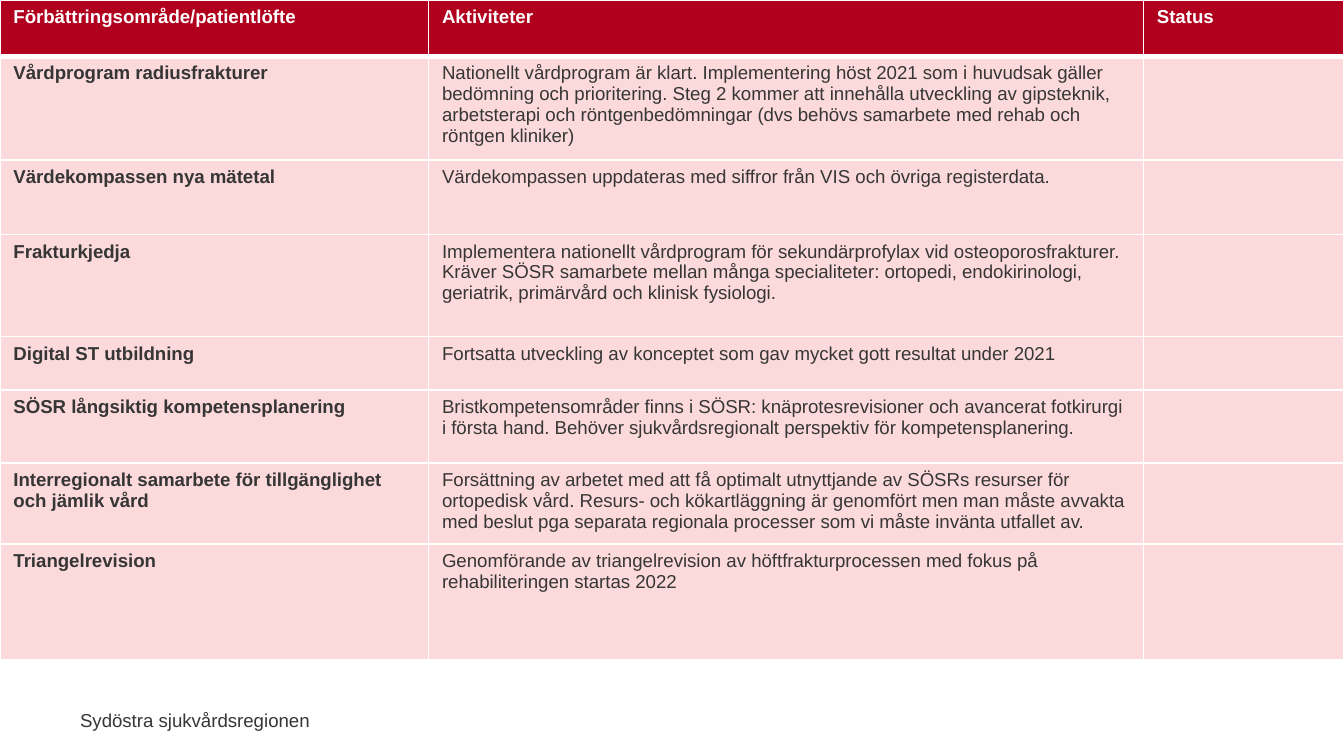
"""Build a one-page activity status table for a regional orthopaedic plan."""

from dataclasses import dataclass
from typing import NamedTuple

from lxml import etree
from pptx import Presentation
from pptx.dml.color import RGBColor
from pptx.enum.text import MSO_ANCHOR, MSO_AUTO_SIZE, PP_ALIGN
from pptx.oxml.ns import qn
from pptx.util import Cm, Pt

RIGHT = PP_ALIGN.RIGHT
MIDDLE = MSO_ANCHOR.MIDDLE
GROW = MSO_AUTO_SIZE.SHAPE_TO_FIT_TEXT


@dataclass(frozen=True)
class Theme:
    font: str = "Arial"
    size: Pt = Pt(10)
    text: str = "363636"
    light: str = "FFFFFF"
    header: str = "B1001E"
    body: str = "FCD9DA"
    thin: Pt = Pt(1)
    thick: Pt = Pt(3)


class Activity(NamedTuple):
    height: float
    area: str
    action: str
    status: str = ""


THEME = Theme()
COLUMN_WIDTHS = (8.1, 13.51, 3.79)
ACTIVITIES = (
    Activity(1.06, "Förbättringsområde/patientlöfte", "Aktiviteter", "Status"),
    Activity(
        1.96,
        "Vårdprogram radiusfrakturer",
        "Nationellt vårdprogram är klart. Implementering höst 2021 som i huvudsak "
        "gäller bedömning och prioritering. Steg 2 kommer att innehålla utveckling "
        "av gipsteknik, arbetsterapi och röntgenbedömningar (dvs behövs samarbete "
        "med rehab och röntgen kliniker)",
    ),
    Activity(
        1.41,
        "Värdekompassen nya mätetal",
        "Värdekompassen uppdateras med siffror från VIS och övriga registerdata.",
    ),
    Activity(
        1.93,
        "Frakturkjedja",
        "Implementera nationellt vårdprogram för sekundärprofylax vid "
        "osteoporosfrakturer. Kräver SÖSR samarbete mellan många specialiteter: "
        "ortopedi, endokirinologi, geriatrik, primärvård och klinisk fysiologi.",
    ),
    Activity(
        1.01,
        "Digital ST utbildning",
        "Fortsatta utveckling av konceptet som gav mycket gott resultat under 2021",
    ),
    Activity(
        1.38,
        "SÖSR långsiktig kompetensplanering",
        "Bristkompetensområder finns i SÖSR: knäprotesrevisioner och avancerat "
        "fotkirurgi i första hand. Behöver sjukvårdsregionalt perspektiv för "
        "kompetensplanering.",
    ),
    Activity(
        1.53,
        "Interregionalt samarbete för tillgänglighet och jämlik vård",
        "Forsättning av arbetet med att få optimalt utnyttjande av SÖSRs resurser "
        "för ortopedisk vård. Resurs- och kökartläggning är genomfört men man måste "
        "avvakta med beslut pga separata regionala processer som vi måste invänta "
        "utfallet av.",
    ),
    Activity(
        2.18,
        "Triangelrevision",
        "Genomförande av triangelrevision av höftfrakturprocessen med fokus på "
        "rehabiliteringen startas 2022",
    ),
)


def style_text(frame, color: str, bold: bool = False) -> None:
    for para in frame.paragraphs:
        para.font.size = THEME.size
        for span in para.runs:
            span.font.name = THEME.font
            span.font.size = THEME.size
            span.font.bold = bold
            span.font.color.rgb = RGBColor.from_string(color)


def add_borders(cell, top: Pt, bottom: Pt) -> None:
    properties = cell._tc.get_or_add_tcPr()
    widths = {"a:lnL": THEME.thin, "a:lnR": THEME.thin, "a:lnT": top, "a:lnB": bottom}
    for tag, width in widths.items():
        line = etree.SubElement(properties, qn(tag), w=str(int(width)))
        fill = etree.SubElement(line, qn("a:solidFill"))
        etree.SubElement(fill, qn("a:srgbClr"), val=THEME.light)


def fill_cell(cell, text: str, row: int, column: int) -> None:
    is_header = row == 0
    add_borders(
        cell,
        top=THEME.thick if row == 1 else THEME.thin,
        bottom=THEME.thick if is_header else THEME.thin,
    )
    cell.fill.solid()
    cell.fill.fore_color.rgb = RGBColor.from_string(THEME.header if is_header else THEME.body)
    cell.text_frame.text = text
    style_text(cell.text_frame, THEME.light if is_header else THEME.text, is_header or column == 0)


def add_activity_table(page, activities: tuple[Activity, ...]) -> None:
    height = sum(activity.height for activity in activities)
    table = page.shapes.add_table(
        len(activities), len(COLUMN_WIDTHS), 0, 0, Cm(sum(COLUMN_WIDTHS)), Cm(height)
    ).table
    table.horz_banding = False
    for column, width in zip(table.columns, COLUMN_WIDTHS):
        column.width = Cm(width)
    for row, activity in enumerate(activities):
        table.rows[row].height = Cm(activity.height)
        for column, text in enumerate((activity.area, activity.action, activity.status)):
            fill_cell(table.cell(row, column), text, row, column)


def add_footer(page, text: str) -> None:
    box = page.shapes.add_textbox(Cm(1.22), Cm(13.26), Cm(4.88), Cm(0.69))
    frame = box.text_frame
    frame.text = text
    frame.word_wrap = False
    frame.auto_size = GROW
    frame.vertical_anchor = MIDDLE
    frame.paragraphs[0].alignment = RIGHT
    style_text(frame, THEME.text)


def main() -> None:
    deck = Presentation()
    deck.slide_width, deck.slide_height = Cm(25.4), Cm(14.28)
    page = deck.slides.add_slide(deck.slide_layouts[6])
    add_footer(page, "Sydöstra sjukvårdsregionen")
    add_activity_table(page, ACTIVITIES)
    deck.save("out.pptx")


if __name__ == "__main__":
    main()
